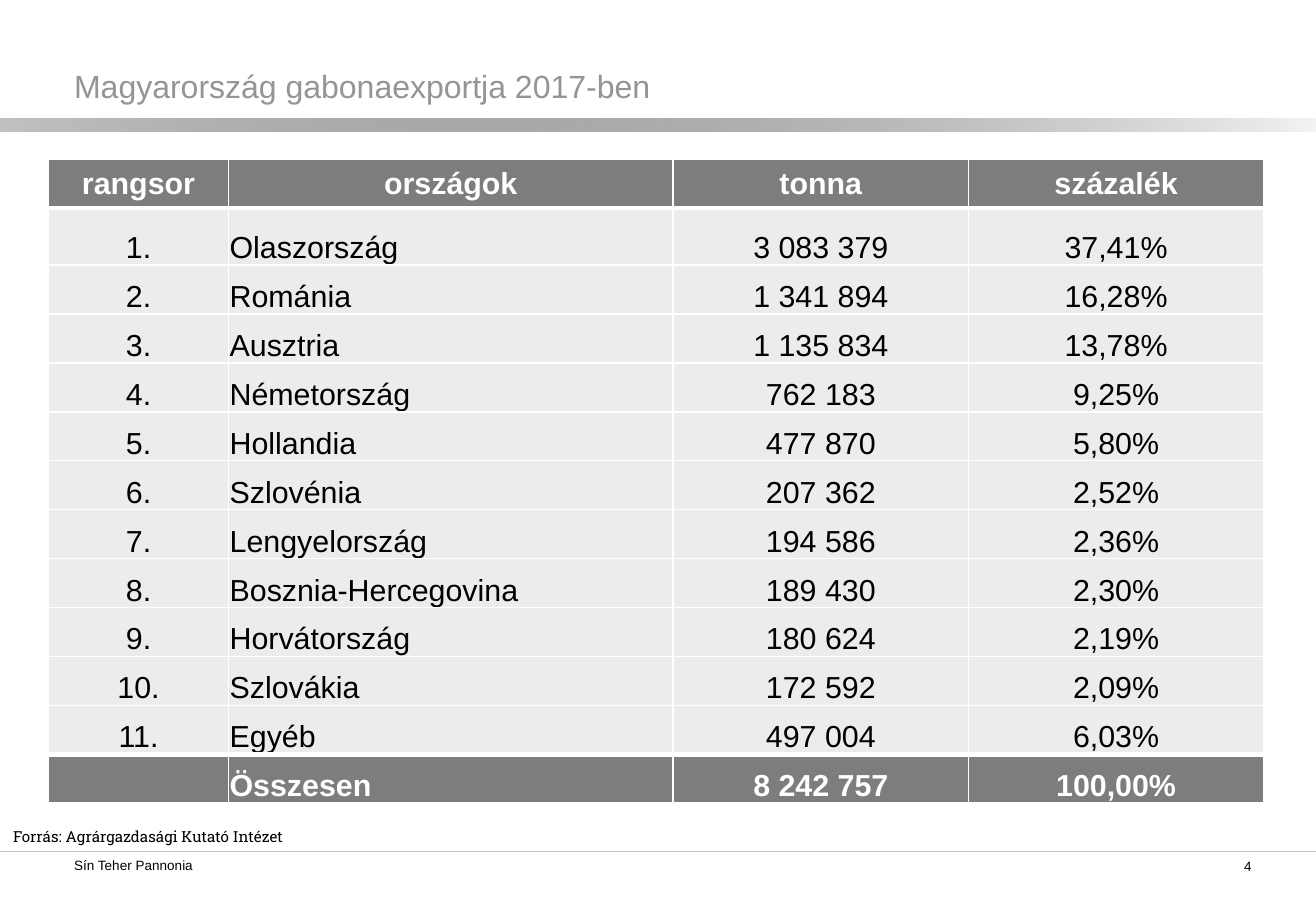
from lxml.etree import SubElement
from pptx import Presentation
from pptx.dml.color import RGBColor as RGB
from pptx.enum.shapes import MSO_CONNECTOR as Connector, MSO_SHAPE as Shape
from pptx.enum.text import MSO_ANCHOR as Anchor, MSO_AUTO_SIZE as AutoSize, PP_ALIGN as Align
from pptx.oxml import parse_xml
from pptx.oxml.ns import nsdecls, qn
from pptx.util import Inches, Pt

WIDTH, HEIGHT = 10.83, 7.5
MARGIN = 0.61
RULE_TOP = 7.01
FOOTER_TOP = 7.06

THEME = {
    "title": dict(name="Arial", size=Pt(19), color="959595", bold=False),
    "footer": dict(name="Arial", size=Pt(8), color="000000", bold=False),
    "source": dict(name="Roboto Slab", size=Pt(9), color="000000", bold=False),
    "body": dict(name="Arial", size=Pt(18), color="000000", bold=False),
    "accent": dict(name="Arial", size=Pt(18), color="FFFFFF", bold=True),
    "body_fill": "ECECEC",
    "accent_fill": "7D7D7D",
    "border": "FFFFFF",
    "rule": "C1C1C1",
    "fade": "000000",
}


def write(frame, text, style, align=Align.LEFT):
    """Put one styled line of text into a text frame."""
    line = frame.paragraphs[0]
    line.alignment = align
    run = line.add_run()
    run.text = text
    for key, value in THEME[style].items():
        if key == "color":
            run.font.color.rgb = RGB.from_string(value)
        else:
            setattr(run.font, key, value)


def set_border(cell, side, points):
    """Draw one edge of a table cell; call before filling the cell."""
    cell._tc.get_or_add_tcPr().append(parse_xml(
        f'<a:ln{side} {nsdecls("a")} w="{Pt(points)}"><a:solidFill>'
        f'<a:srgbClr val="{THEME["border"]}"/></a:solidFill></a:ln{side}>'))


deck = Presentation()
deck.slide_width, deck.slide_height = Inches(WIDTH), Inches(HEIGHT)
slide = deck.slides.add_slide(deck.slide_layouts[5])
shapes = slide.shapes

# Band under the title, fading to the right
band = shapes.add_shape(Shape.RECTANGLE, 0, Inches(0.98), Inches(WIDTH), Inches(0.1))
band.shadow.inherit = False
band.line.fill.background()
band.fill.gradient()
band.fill.gradient_angle = 0
for stop, position, color in zip(band.fill.gradient_stops, (0, 1), ("rule", "fade")):
    stop.position = position
    stop.color.rgb = RGB.from_string(THEME[color])
fade_color = list(band._element.spPr.iter(qn("a:srgbClr")))[-1]
SubElement(fade_color, qn("a:alpha")).set("val", "5000")

# Line above the footer
rule = shapes.add_connector(Connector.STRAIGHT, 0, Inches(RULE_TOP), Inches(WIDTH), Inches(RULE_TOP))
rule.line.color.rgb = RGB.from_string(THEME["rule"])
rule.line.width = Pt(1)
SubElement(rule._element.spPr, qn("a:effectLst"))

# Title
title = shapes.title
title.left, title.top, title.width, title.height = map(Inches, (MARGIN, 0.29, 6.41, 0.57))
frame_format = dict(margin_left=0, margin_top=0, margin_right=0, margin_bottom=0,
                    word_wrap=True, auto_size=AutoSize.NONE)
for key, value in frame_format.items():
    setattr(title.text_frame, key, value)
title.text_frame.vertical_anchor = Anchor.BOTTOM
write(title.text_frame, "Magyarország gabonaexportja 2017-ben", "title")

# Footer, page number and source
notes = [
    ("Sín Teher Pannonia", "footer", (MARGIN, FOOTER_TOP, 1.82, 0.4), Align.LEFT),
    ("4", "footer", (9.87, FOOTER_TOP, 0.43, 0.29), Align.RIGHT),
    ("Forrás: Agrárgazdasági Kutató Intézet", "source", (0.01, 6.76, 2.48, 0.25), Align.LEFT),
]
for text, style, place, align in notes:
    note = shapes.add_textbox(*map(Inches, place)).text_frame
    if style == "footer":
        for key, value in frame_format.items():
            setattr(note, key, value)
    else:
        note.word_wrap = True
    write(note, text, style, align)

# Export table
exports = [
    ("Olaszország", "3 083 379", "37,41%"),
    ("Románia", "1 341 894", "16,28%"),
    ("Ausztria", "1 135 834", "13,78%"),
    ("Németország", "762 183", "9,25%"),
    ("Hollandia", "477 870", "5,80%"),
    ("Szlovénia", "207 362", "2,52%"),
    ("Lengyelország", "194 586", "2,36%"),
    ("Bosznia-Hercegovina", "189 430", "2,30%"),
    ("Horvátország", "180 624", "2,19%"),
    ("Szlovákia", "172 592", "2,09%"),
    ("Egyéb", "497 004", "6,03%"),
]
rows = [("rangsor", "országok", "tonna", "százalék")]
rows += [(f"{rank}.", *export) for rank, export in enumerate(exports, 1)]
rows.append(("", "Összesen", "8 242 757", "100,00%"))
total = len(rows) - 1
column_widths = (1.48, 3.66, 2.43, 2.43)
row_heights = [0.47 if r == 1 else 0.403 for r in range(len(rows))]

table = shapes.add_table(len(rows), len(column_widths), Inches(0.4), Inches(1.31),
                         Inches(sum(column_widths)), Inches(sum(row_heights))).table
table.first_row = table.horz_banding = False
for column, width in zip(table.columns, column_widths):
    column.width = Inches(width)

cell_margins = dict(margin_left=Inches(0.01), margin_top=Inches(0.01),
                    margin_right=Inches(0.01), margin_bottom=0)
for r, values in enumerate(rows):
    table.rows[r].height = Inches(row_heights[r])
    style = "accent" if r in (0, total) else "body"
    # Heavy edges set the header and the total apart
    edges = dict(L=1, R=1, T=3 if r in (1, total) else 1, B=3 if r in (0, total - 1) else 1)
    for c, value in enumerate(values):
        cell = table.cell(r, c)
        for key, margin in cell_margins.items():
            setattr(cell, key, margin)
        cell.vertical_anchor = Anchor.MIDDLE if r == 0 else Anchor.BOTTOM
        for side, points in edges.items():
            set_border(cell, side, points)
        cell.fill.solid()
        cell.fill.fore_color.rgb = RGB.from_string(THEME[f"{style}_fill"])
        if value:
            write(cell.text_frame, value, style, Align.LEFT if c == 1 and r else Align.CENTER)

deck.save("out.pptx")
